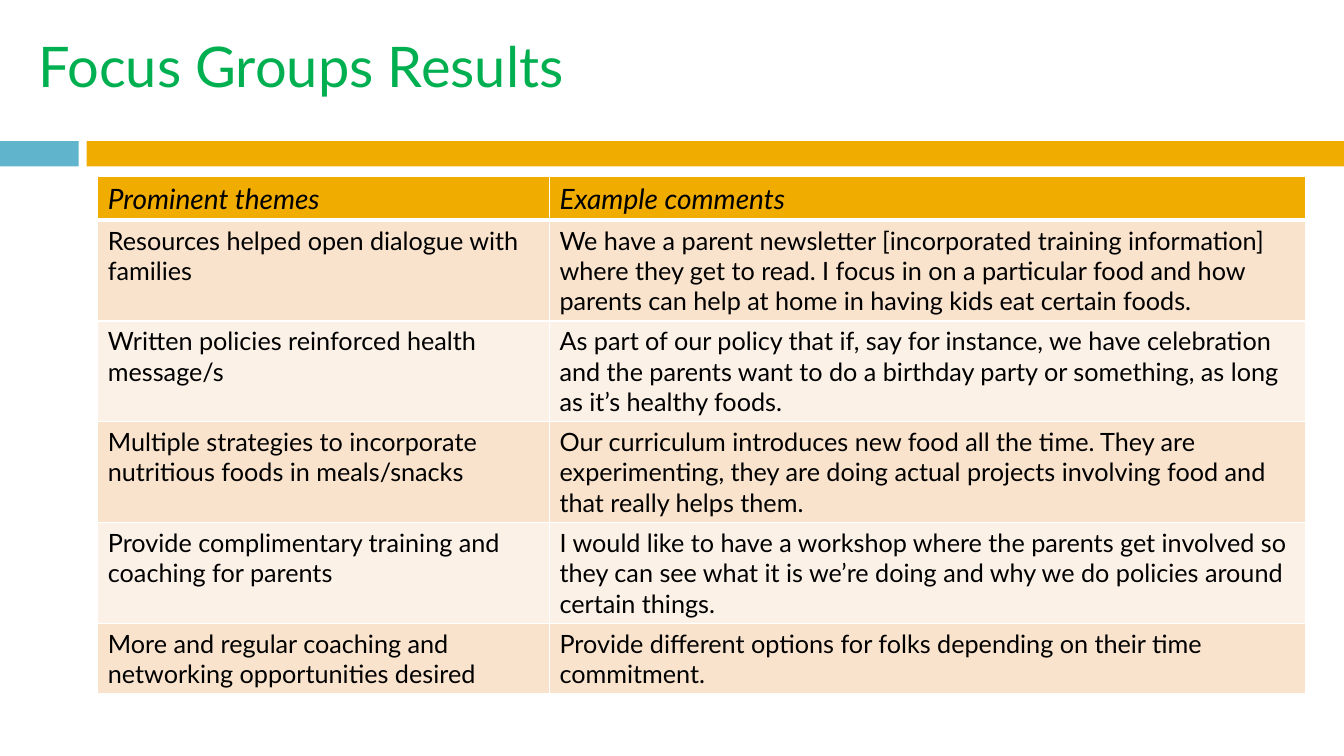
from lxml.etree import SubElement
from pptx import Presentation
from pptx.dml.color import RGBColor
from pptx.enum.shapes import MSO_SHAPE
from pptx.enum.text import MSO_ANCHOR, PP_ALIGN
from pptx.oxml import parse_xml
from pptx.oxml.ns import nsdecls, qn
from pptx.util import Inches, Pt

FONT = "Lato"
GOLD, BLUE, GREEN = "F0AD00", "60B5CC", "00B050"
BLACK, WHITE = "000000", "FFFFFF"
BANDS = ("F9E3CC", "FCF1E7")
COLUMN_WIDTHS = (4.48, 7.5)
ROW_HEIGHTS = (0.43, 1, 1, 1, 1, 0.7)
HEADINGS = ("Prominent themes", "Example comments")
FINDINGS = (
    ("Resources helped open dialogue with families",
     "We have a parent newsletter [incorporated training information] where "
     "they get to read. I focus in on a particular food and how parents can "
     "help at home in having kids eat certain foods."),
    ("Written policies reinforced health message/s",
     "As part of our policy that if, say for instance, we have celebration "
     "and the parents want to do a birthday party or something, as long as "
     "it’s healthy foods."),
    ("Multiple strategies to incorporate nutritious foods in meals/snacks",
     "Our curriculum introduces new food all the time. They are "
     "experimenting, they are doing actual projects involving food and that "
     "really helps them."),
    ("Provide complimentary training and coaching for parents",
     "I would like to have a workshop where the parents get involved so they "
     "can see what it is we’re doing and why we do policies around certain "
     "things."),
    ("More and regular coaching and networking opportunities desired",
     "Provide different options for folks depending on their time "
     "commitment."),
)


def color(hex_code):
    """Turn a hex string into a colour."""
    return RGBColor.from_string(hex_code)


def write(frame, text, size, hex_code, italic=False):
    """Put one left-aligned run into a text frame."""
    paragraph = frame.paragraphs[0]
    paragraph.alignment = PP_ALIGN.LEFT
    run = paragraph.add_run()
    run.text = text
    run.font.name = FONT
    run.font.size = Pt(size)
    run.font.bold = False
    run.font.italic = italic
    run.font.color.rgb = color(hex_code)


def add_title(slide, text):
    """Add the slide heading."""
    title = slide.shapes.add_textbox(
        Inches(0.28), Inches(0.11), Inches(11.89), Inches(1.08))
    title.text_frame.word_wrap = True
    title.text_frame.vertical_anchor = MSO_ANCHOR.MIDDLE
    write(title.text_frame, text, 40, GREEN)


def add_band(slide, left, width, hex_code):
    """Add one piece of the divider under the title."""
    band = slide.shapes.add_shape(
        MSO_SHAPE.RECTANGLE, Inches(left), Inches(1.4), Inches(width), Inches(0.25))
    band.shadow.inherit = False
    band.fill.solid()
    band.fill.fore_color.rgb = color(hex_code)
    band.line.fill.background()


def set_borders(cell, top, bottom):
    """Draw white cell borders with the given top and bottom widths."""
    properties = cell._tc.get_or_add_tcPr()
    widths = {"lnL": 1, "lnR": 1, "lnT": top, "lnB": bottom}
    for position, (side, width) in enumerate(widths.items()):
        border = parse_xml(f'<a:{side} {nsdecls("a")} w="{Pt(width)}"/>')
        fill = SubElement(border, qn("a:solidFill"))
        SubElement(fill, qn("a:srgbClr"), val=WHITE)
        properties.insert(position, border)


def add_findings(slide):
    """Add the table of themes and comments."""
    rows = (HEADINGS, *FINDINGS)
    table = slide.shapes.add_table(
        len(rows), len(HEADINGS), Inches(0.97), Inches(1.75),
        Inches(sum(COLUMN_WIDTHS)), Inches(sum(ROW_HEIGHTS))).table
    for column, width in zip(table.columns, COLUMN_WIDTHS):
        column.width = Inches(width)
    for index, (texts, height) in enumerate(zip(rows, ROW_HEIGHTS)):
        table.rows[index].height = Inches(height)
        heading = index == 0
        for cell, text in zip(table.rows[index].cells, texts):
            cell.fill.solid()
            cell.fill.fore_color.rgb = color(GOLD if heading else BANDS[(index - 1) % 2])
            set_borders(cell, 3 if index == 1 else 1, 3 if heading else 1)
            write(cell.text_frame, text, 20 if heading else 18, BLACK, heading)


def main():
    """Build and save the slide."""
    deck = Presentation()
    deck.slide_width, deck.slide_height = Inches(13.33), Inches(7.5)
    slide = deck.slides.add_slide(deck.slide_layouts[6])
    add_band(slide, 0, 0.78, BLUE)
    add_band(slide, 0.86, 12.47, GOLD)
    add_title(slide, "Focus Groups Results")
    add_findings(slide)
    deck.save("out.pptx")


if __name__ == "__main__":
    main()
